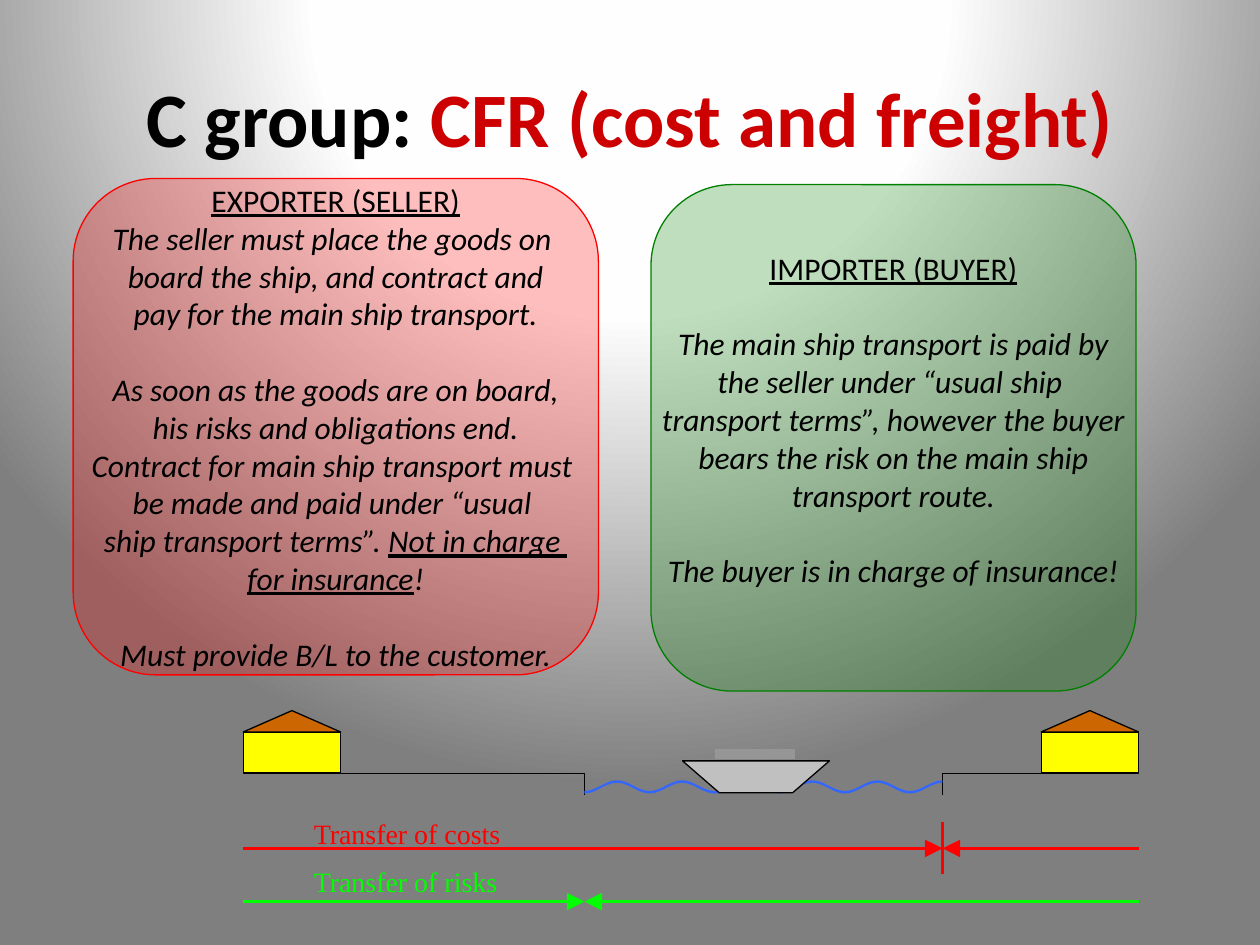
from math import cos, pi
from lxml import etree
from pptx import Presentation
from pptx.dml import color
from pptx.enum import shapes, text
from pptx.oxml import parse_xml
from pptx.oxml.ns import qn, nsdecls
from pptx.util import Pt

BLACK, RED, GREEN = "000000", "FF0000", "00FF00"
LEFT, SHIP, PORT, RIGHT = 139, 334, 538.6, 650.6
SHORE = 442
LINE = 21.6

SELLER = [
    ["_EXPORTER (SELLER)_",
     "The seller must place the goods on ",
     "board the ship, and contract and",
     "pay for the main ship transport."],
    ["As soon as the goods are on board,",
     "his risks and obligations end.",
     "Contract for main ship transport must ",
     "be made and paid under “usual ",
     "ship transport terms”. _Not in charge _",
     "_for insurance_!"],
    ["Must provide B/L to the customer."],
]
BUYER = [
    ["_IMPORTER (BUYER)_"],
    ["The main ship transport is paid by",
     "the seller under “usual ship ",
     "transport terms”, however the buyer",
     "bears the risk on the main ship",
     "transport route."],
    ["The buyer is in charge of insurance!"],
]


def rgb(value):
    return color.RGBColor.from_string(value)


def style(font, size, face, tint):
    font.size, font.name = Pt(size), face
    font.color.rgb = rgb(tint)


def paint(shape, fill, edge=None):
    shape.shadow.inherit = False
    shape.fill.solid()
    shape.fill.fore_color.rgb = rgb(fill)
    if edge:
        shape.line.color.rgb = rgb(edge)
        shape.line.width = Pt(0.75)
    else:
        shape.line.fill.background()
    return shape


def add_back(slide):
    slide.background.fill.solid()
    solid = next(slide.element.iter(qn("a:solidFill")))
    stops = "".join(
        f'<a:gs pos="{pos}000"><a:srgbClr val="{tint}"/></a:gs>'
        for pos, tint in ((0, "FFFFFF"), (40, "FEFEFE"), (100, "7F7F7F")))
    grad = parse_xml(
        f'<a:gradFill {nsdecls("a")} rotWithShape="1"><a:gsLst>{stops}</a:gsLst>'
        '<a:path path="circle"><a:fillToRect l="50000" t="-80000" '
        'r="50000" b="180000"/></a:path></a:gradFill>')
    solid.getparent().replace(solid, grad)


def add_title(slide):
    title = slide.shapes.title
    title.left, title.top, title.width, title.height = map(Pt, (36, 21.6, 648, 90))
    frame = title.text_frame
    frame.vertical_anchor = text.MSO_ANCHOR.MIDDLE
    para = frame.paragraphs[0]
    para.alignment = text.PP_ALIGN.CENTER
    for words, tint in (("C group: ", BLACK), ("CFR (cost and freight)", "CC0000")):
        run = para.add_run()
        run.text = words
        style(run.font, 44, "Calibri", tint)
        run.font.bold = True


def add_label(slide, top, words, tint):
    box = slide.shapes.add_textbox(Pt(179.3), Pt(top), Pt(115), Pt(19.4))
    frame = box.text_frame
    frame.margin_left = frame.margin_right = 0
    frame.margin_top = frame.margin_bottom = 0
    frame.word_wrap = False
    frame.text = words
    style(frame.paragraphs[0].runs[0].font, 16, "Times New Roman", tint)


def add_rect(slide, x, y, wide, high, fill, edge=None):
    kind = shapes.MSO_SHAPE.RECTANGLE
    shape = slide.shapes.add_shape(kind, Pt(x), Pt(y), Pt(wide), Pt(high))
    return paint(shape, fill, edge)


def add_form(slide, points, fill, edge=None):
    spots = [(Pt(x), Pt(y)) for x, y in points]
    form = slide.shapes.build_freeform(*spots[0])
    form.add_line_segments(spots[1:], close=True)
    return paint(form.convert_to_shape(), fill, edge)


def add_line(slide, x1, y1, x2, y2, tint=BLACK, width=0.75, head=False):
    line = slide.shapes.add_connector(
        shapes.MSO_CONNECTOR.STRAIGHT, Pt(x1), Pt(y1), Pt(x2), Pt(y2))
    line.line.color.rgb = rgb(tint)
    line.line.width = Pt(width)
    if head:
        etree.SubElement(line.line._get_or_add_ln(), qn("a:tailEnd"),
                         type="triangle", w="lg", len="lg")
    etree.SubElement(line.element.spPr, qn("a:effectLst"))


def add_house(slide, x):
    wide, eaves = 55.6, 418.3
    add_rect(slide, x, eaves, wide, 23.4, "FFFF00", BLACK)
    add_form(slide, [(x + wide / 2, 406.1), (x, eaves), (x + wide, eaves)],
             "CC6600", BLACK)


def add_sea(slide):
    steps, waves = 66, 5.5
    crest = [(SHIP + (PORT - SHIP) * i / steps,
              449 + 3.1 * cos(2 * pi * waves * i / steps))
             for i in range(steps + 1)]
    base = [(x, y + 1.4) for x, y in reversed(crest)]
    add_form(slide, crest + base, "3366FF")


def add_boat(slide):
    add_form(slide, [(390, 434.8), (411, 453), (453, 453), (474, 434.8)],
             "C0C0C0", BLACK)
    add_rect(slide, 408.7, 428.5, 45.4, 5, "969696", "969696")


def add_card(slide, x, y, wide, high, tint, blocks):
    kind = shapes.MSO_SHAPE.ROUNDED_RECTANGLE
    card = slide.shapes.add_shape(kind, Pt(x), Pt(y), Pt(wide), Pt(high))
    paint(card, tint, tint)
    fill = card.fill._xPr.find(qn("a:solidFill"))
    etree.SubElement(fill[0], qn("a:alpha"), val="25000")
    frame = card.text_frame
    frame.word_wrap = False
    frame.vertical_anchor = text.MSO_ANCHOR.MIDDLE
    para = None
    for block in blocks:
        for row, words in enumerate(block):
            first = para is None
            para = frame.paragraphs[0] if first else frame.add_paragraph()
            para.alignment = text.PP_ALIGN.CENTER
            if row == 0 and not first:
                para.space_before = Pt(LINE)
            for part, piece in enumerate(words.split("_")):
                if piece:
                    run = para.add_run()
                    run.text = piece
                    style(run.font, 18, "Calibri", BLACK)
                    run.font.italic = not first
                    run.font.underline = part % 2 == 1
    return frame


def main():
    deck = Presentation()
    deck.slide_width, deck.slide_height = Pt(720), Pt(540)
    slide = deck.slides.add_slide(deck.slide_layouts[5])
    add_back(slide)
    add_title(slide)
    add_label(slide, 466.6, "Transfer of costs", RED)
    add_label(slide, 493.9, "Transfer of risks", GREEN)
    for x in (LEFT, RIGHT - 55.6):
        add_house(slide, x)
    add_line(slide, LEFT + 55.6, SHORE, SHIP, SHORE)
    add_line(slide, PORT, SHORE, RIGHT - 55.6, SHORE)
    for x in (SHIP, PORT):
        add_line(slide, x, SHORE, x, 454.3)
    add_sea(slide)
    add_boat(slide)
    for y, meet, tint in ((484.8, PORT, RED), (515.2, SHIP, GREEN)):
        for start in (LEFT, RIGHT):
            add_line(slide, start, y, meet, y, tint, 2, True)
    add_line(slide, PORT, 469.5, PORT, 499.7, RED, 1.75)
    add_card(slide, 41.8, 102, 300.2, 283.7, RED, SELLER)
    buyer = add_card(slide, 372, 105.5, 277.2, 289.4, "008000", BUYER)
    buyer.margin_bottom = Pt(3.6 + LINE)
    deck.save("out.pptx")


if __name__ == "__main__":
    main()
